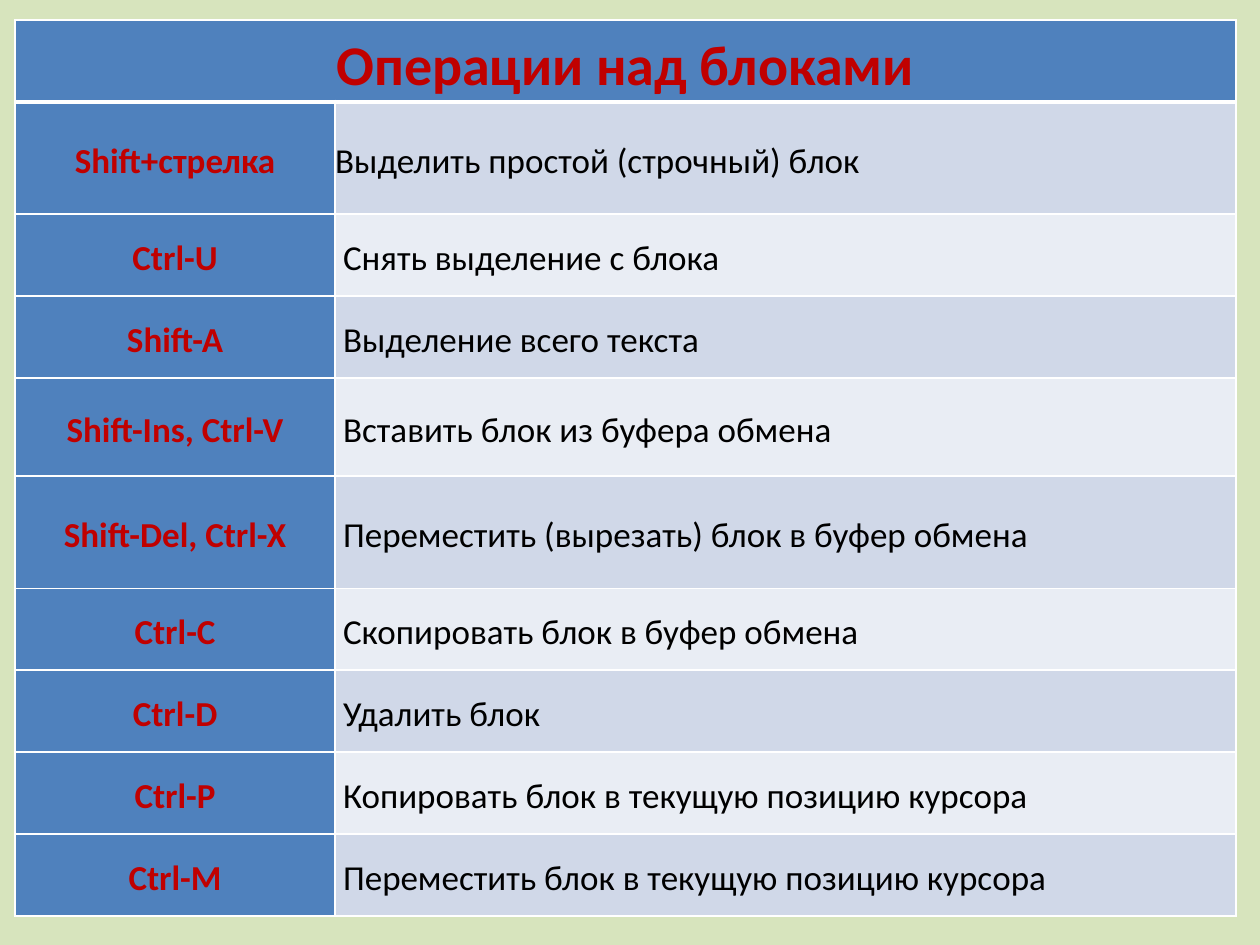
from lxml.etree import SubElement
from pptx import Presentation
from pptx.dml.color import RGBColor
from pptx.enum.text import MSO_ANCHOR, PP_ALIGN
from pptx.oxml.ns import qn
from pptx.util import Inches, Pt

BACKGROUND = RGBColor(0xD7, 0xE4, 0xBD)
HEADER_BLUE = RGBColor(0x4F, 0x81, 0xBD)
BANDS = (RGBColor(0xD0, 0xD8, 0xE8), RGBColor(0xE9, 0xED, 0xF4))
RED = RGBColor(0xC0, 0x00, 0x00)
BLACK = RGBColor(0x00, 0x00, 0x00)
WHITE = RGBColor(0xFF, 0xFF, 0xFF)

TITLE = "Операции над блоками"
BASE_HEIGHT = 0.65
TABLE_BOX = (0.12, 0.16, 9.69, 7.11)
KEY_SHARE = 2.54 / 9.69
OPERATIONS = [
    ("Shift+стрелка", "Выделить простой (строчный) блок", 0.89),
    ("Ctrl-U", " Снять выделение с блока", BASE_HEIGHT),
    ("Shift-A", " Выделение всего текста", BASE_HEIGHT),
    ("Shift-Ins, Ctrl-V", " Вставить блок из буфера обмена", 0.78),
    ("Shift-Del, Ctrl-X", " Переместить (вырезать) блок в буфер обмена", 0.89),
    ("Ctrl-C", " Скопировать блок в буфер обмена", BASE_HEIGHT),
    ("Ctrl-D", " Удалить блок", BASE_HEIGHT),
    ("Ctrl-P", " Копировать блок в текущую позицию курсора", BASE_HEIGHT),
    ("Ctrl-M", " Переместить блок в текущую позицию курсора", BASE_HEIGHT),
]


def set_borders(cell, top=1, bottom=1):
    properties = cell._tc.get_or_add_tcPr()
    widths = {"a:lnL": 1, "a:lnR": 1, "a:lnT": top, "a:lnB": bottom}
    for position, (tag, width) in enumerate(widths.items()):
        line = SubElement(properties, qn(tag), w=str(Pt(width)))
        fill = SubElement(line, qn("a:solidFill"))
        SubElement(fill, qn("a:srgbClr"), val=str(WHITE))
        properties.insert(position, line)


def style_cell(cell, fill, top=1, bottom=1):
    cell.fill.solid()
    cell.fill.fore_color.rgb = fill
    cell.margin_left = cell.margin_right = 0
    cell.margin_top = cell.margin_bottom = 0
    cell.vertical_anchor = MSO_ANCHOR.MIDDLE
    set_borders(cell, top, bottom)


def write_cell(cell, text, size, color, bold, alignment):
    paragraph = cell.text_frame.paragraphs[0]
    paragraph.alignment = alignment
    paragraph.line_spacing = 1.15
    run = paragraph.add_run()
    run.text = text
    run.font.name = "Calibri"
    run.font.size = Pt(size)
    run.font.bold = bold
    run.font.color.rgb = color


def add_operations_table(slide, left, top, width, height):
    frame = slide.shapes.add_table(
        len(OPERATIONS) + 1, 2,
        Inches(left), Inches(top), Inches(width), Inches(height))
    table = frame.table
    for column, share in zip(table.columns, (KEY_SHARE, 1 - KEY_SHARE)):
        column.width = Inches(width * share)

    table.rows[0].height = Inches(BASE_HEIGHT)
    heading = table.cell(0, 0)
    heading.merge(table.cell(0, 1))
    for cell in table.rows[0].cells:
        style_cell(cell, HEADER_BLUE, bottom=3)
    write_cell(heading, TITLE, 32, RED, True, PP_ALIGN.CENTER)

    for index, (keys, action, row_height) in enumerate(OPERATIONS):
        row = table.rows[index + 1]
        row.height = Inches(row_height)
        key_cell, action_cell = row.cells
        top_width = 3 if index == 0 else 1
        style_cell(key_cell, HEADER_BLUE, top=top_width)
        style_cell(action_cell, BANDS[index % 2], top=top_width)
        write_cell(key_cell, keys, 20, RED, True, PP_ALIGN.CENTER)
        write_cell(action_cell, action, 20, BLACK, False, PP_ALIGN.LEFT)


def main():
    presentation = Presentation()
    presentation.slide_width = Inches(10)
    presentation.slide_height = Inches(7.5)
    slide = presentation.slides.add_slide(presentation.slide_layouts[6])
    slide.background.fill.solid()
    slide.background.fill.fore_color.rgb = BACKGROUND
    add_operations_table(slide, *TABLE_BOX)
    presentation.save("out.pptx")


if __name__ == "__main__":
    main()
